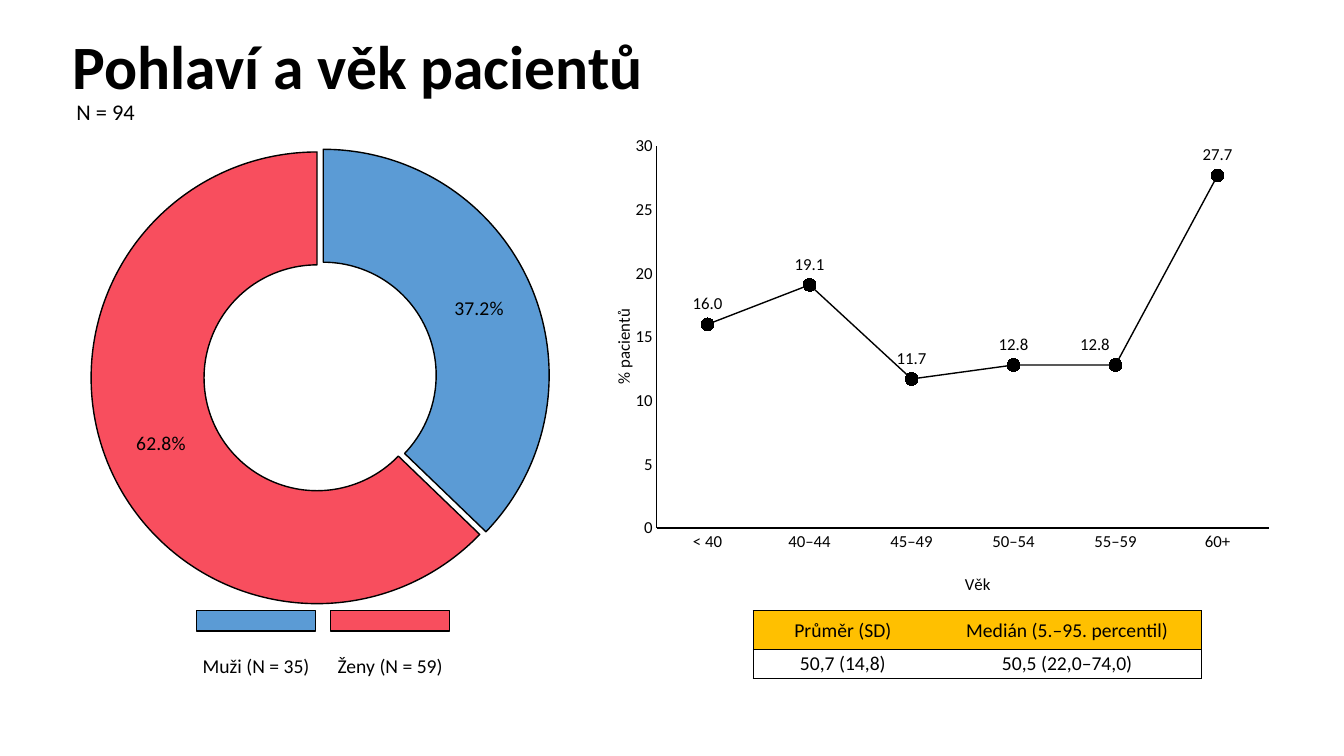
from lxml import etree
from pptx import Presentation
from pptx.chart.data import CategoryChartData
from pptx.dml.color import RGBColor
from pptx.enum.chart import XL_CHART_TYPE, XL_LABEL_POSITION, XL_MARKER_STYLE, XL_TICK_MARK
from pptx.enum.shapes import MSO_SHAPE
from pptx.enum.text import MSO_ANCHOR, PP_ALIGN
from pptx.oxml import parse_xml
from pptx.oxml.ns import nsdecls, qn
from pptx.util import Inches, Pt

HEX = {"black": "000000", "white": "FFFFFF", "blue": "5B9BD5", "red": "F84E5E", "gold": "FFC000"}
COLOR = {name: RGBColor.from_string(code) for name, code in HEX.items()}


def style(font, size, bold=False):
    font.name, font.size, font.bold = "Calibri", Pt(size), bold
    font.color.rgb = COLOR["black"]


def place(node, index, **parts):
    """Give a chart part a manual layout, in fractions of the chart."""
    for old in node.findall(qn("c:layout")):
        node.remove(old)
    layout = etree.Element(qn("c:layout"))
    manual = etree.SubElement(layout, qn("c:manualLayout"))
    for tag, val in parts.items():
        etree.SubElement(manual, qn("c:" + tag)).set("val", str(val))
    node.insert(index, layout)


deck = Presentation()
deck.slide_width, deck.slide_height = Inches(13.33), Inches(7.5)
slide = deck.slides.add_slide(deck.slide_layouts[6])
shapes = slide.shapes

# Heading, sample size and legend labels
SWATCH = 1.18
legend = [("Muži (N = 35)", "blue", 1.95), ("Ženy (N = 59)", "red", 3.28)]
texts = [("Pohlaví a věk pacientů", 0.62, 0.2, 12.09, 0.98, 44, PP_ALIGN.LEFT),
         ("N = 94", 0.66, 0.9, 1, 0.42, 16, PP_ALIGN.LEFT)]
texts += [(label, left - 0.1, 6.4, SWATCH + 0.2, 0.4, 14, PP_ALIGN.CENTER)
          for label, _, left in legend]
for text, left, top, width, height, size, align in texts:
    frame = shapes.add_textbox(Inches(left), Inches(top), Inches(width), Inches(height)).text_frame
    frame.word_wrap = True
    frame.vertical_anchor = MSO_ANCHOR.MIDDLE
    para = frame.paragraphs[0]
    para.alignment = align
    para.line_spacing = 0.9 if size == 44 else 1.0
    run = para.add_run()
    run.text = text
    style(run.font, size, size == 44)

# Legend swatches
for _, color, left in legend:
    swatch = shapes.add_shape(MSO_SHAPE.RECTANGLE, Inches(left), Inches(6.06),
                              Inches(SWATCH), Inches(0.2))
    swatch.shadow.inherit = False
    swatch.fill.solid()
    swatch.fill.fore_color.rgb = COLOR[color]
    swatch.line.color.rgb = COLOR["black"]
    swatch.line.width = Pt(1)

# Age line chart
data = CategoryChartData()
data.categories = ["< 40", "40–44", "45–49", "50–54", "55–59", "60+"]
data.add_series("% pacientů", [16, 19.1, 11.7, 12.8, 12.8, 27.7])
ages = shapes.add_chart(XL_CHART_TYPE.LINE_MARKERS, Inches(5.96), Inches(1.28),
                        Inches(6.82), Inches(4.88), data).chart
ages.has_legend = ages.has_title = False
style(ages.font, 12)
place(ages.plots[0]._element.getparent(), 0, layoutTarget="inner", xMode="edge", yMode="edge",
      x=0.081, y=0.035, w=0.89, h=0.776)

line = ages.plots[0].series[0]
line.smooth = False
line.format.line.color.rgb = COLOR["black"]
line.format.line.width = Pt(1)
line.marker.style, line.marker.size = XL_MARKER_STYLE.CIRCLE, 9
line.marker.format.fill.solid()
line.marker.format.fill.fore_color.rgb = COLOR["black"]
line.marker.format.line.color.rgb = COLOR["black"]
labels = line.data_labels
labels.show_value = True
labels.number_format, labels.number_format_is_linked = "#,##0.0", False
labels.position = XL_LABEL_POSITION.ABOVE
style(labels.font, 12)

# Shift the 55–59 label clear of the rising line
moved = line.points[4].data_label
moved.position = XL_LABEL_POSITION.ABOVE
style(moved.font, 12)
place(labels._element.find(qn("c:dLbl")), 1, x=-0.03, y=0)

# Axes
scale = ages.value_axis
scale.minimum_scale, scale.maximum_scale, scale.major_unit = 0, 30, 5
scale.tick_labels.number_format = "#,##0"
scale.tick_labels.number_format_is_linked = False
for axis, title, x, y in [(ages.category_axis, "Věk", 0.525, 0.895),
                          (scale, "% pacientů", 0.012, 0.36)]:
    axis.has_major_gridlines = False
    axis.major_tick_mark = axis.minor_tick_mark = XL_TICK_MARK.NONE
    axis.format.line.color.rgb = COLOR["black"]
    axis.format.line.width = Pt(1)
    style(axis.tick_labels.font, 12)
    frame = axis.axis_title.text_frame
    run = frame.paragraphs[0].add_run()
    run.text = title
    style(run.font, 12)
    if axis is scale:
        frame._txBody.bodyPr.set("rot", "-5400000")
        frame._txBody.bodyPr.set("vert", "horz")
    place(axis.axis_title._element, 1, xMode="edge", yMode="edge", x=x, y=y)

# Age summary table
rows = [("Průměr (SD)", "Medián (5.–95. percentil)"), ("50,7 (14,8)", "50,5 (22,0–74,0)")]
table = shapes.add_table(2, 2, Inches(7.47), Inches(6.06), Inches(4.45), Inches(0.67)).table
for col, width in zip(table.columns, [1.78, 2.67]):
    col.width = Inches(width)
for row, height in zip(table.rows, [0.38, 0.29]):
    row.height = Inches(height)
for r, row in enumerate(rows):
    for c, text in enumerate(row):
        cell = table.cell(r, c)
        cell.margin_left = cell.margin_right = cell.margin_top = Inches(0.01)
        cell.margin_bottom = 0
        cell.vertical_anchor = MSO_ANCHOR.MIDDLE
        cell.fill.solid()
        cell.fill.fore_color.rgb = COLOR["white" if r else "gold"]
        para = cell.text_frame.paragraphs[0]
        para.alignment = PP_ALIGN.CENTER
        run = para.add_run()
        run.text = text
        style(run.font, 14)
        inner = "R" if c == 0 else "L"
        for i, side in enumerate("LRTB"):
            paint = ("<a:noFill/>" if side == inner else
                     f'<a:solidFill><a:srgbClr val="{HEX["black"]}"/></a:solidFill>')
            edge = parse_xml(f'<a:ln{side} {nsdecls("a")} w="12700">{paint}</a:ln{side}>')
            cell._tc.get_or_add_tcPr().insert(i, edge)

# Sex doughnut chart
data = CategoryChartData()
data.categories = ["1", "2"]
data.add_series("Pohlaví", [37.2, 62.8])
ring = shapes.add_chart(XL_CHART_TYPE.DOUGHNUT, Inches(0.65), Inches(1.39),
                        Inches(5.07), Inches(4.68), data).chart
ring.has_legend = ring.has_title = False
style(ring.font, 10)
plot = ring.plots[0]
place(plot._element.getparent(), 0, layoutTarget="inner", xMode="edge", yMode="edge",
      x=0.05, y=0.025, w=0.884, h=0.958)
plot._element.find(qn("c:holeSize")).set("val", "49")
sexes = plot.series[0]
for i, (_, color, _) in enumerate(legend):
    slice_ = sexes.points[i].format
    slice_.fill.solid()
    slice_.fill.fore_color.rgb = COLOR[color]
    slice_.line.color.rgb = COLOR["black"]
    slice_.line.width = Pt(1)
burst = etree.Element(qn("c:explosion"))
burst.set("val", "6")
sexes._element.find(qn("c:dPt")).find(qn("c:spPr")).addprevious(burst)
labels = sexes.data_labels
labels.show_percentage, labels.show_value = True, False
labels.number_format, labels.number_format_is_linked = "0.0%", False
style(labels.font, 14)

deck.save("out.pptx")
